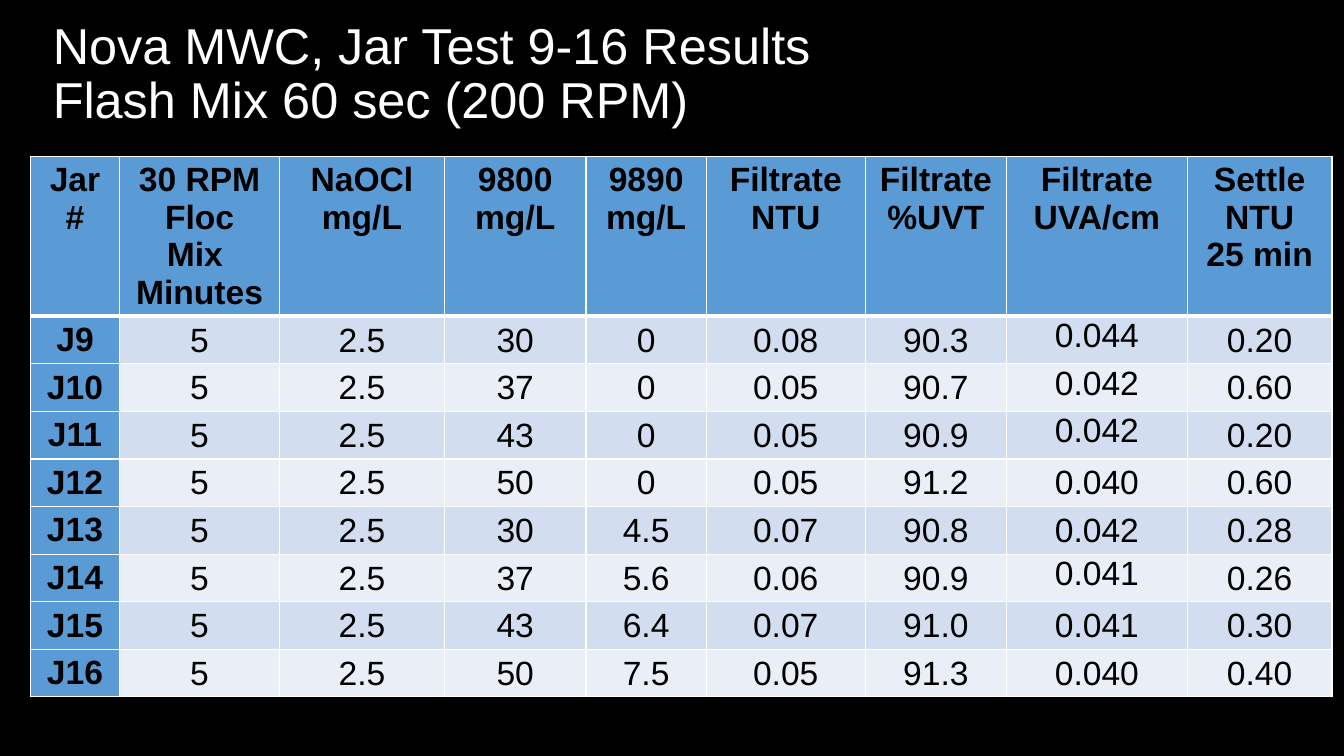
from lxml.etree import SubElement
from pptx import Presentation
from pptx.dml.color import RGBColor
from pptx.enum.text import MSO_ANCHOR, MSO_AUTO_SIZE, PP_ALIGN
from pptx.oxml.ns import qn
from pptx.util import Pt

COLORS = {
    "background": "000000",
    "title": "FFFFFF",
    "text": "000000",
    "header": "5B9BD5",
    "odd": "D2DEEF",
    "even": "EAEFF7",
    "border": "FFFFFF",
}
FONT = "Arial"
TITLE = "Nova MWC, Jar Test 9-16 Results\vFlash Mix 60 sec (200 RPM)"
HEADERS = [
    "Jar\v#", "30 RPM\nFloc\nMix \nMinutes", "NaOCl\nmg/L", "9800\nmg/L",
    "9890\nmg/L", "Filtrate\nNTU", "Filtrate\n%UVT", "Filtrate\nUVA/cm",
    "Settle\nNTU\n25 min",
]
RESULTS = [
    ["J9", "5", "2.5", "30", "0", "0.08", "90.3", "0.044", "0.20"],
    ["J10", "5", "2.5", "37", "0", "0.05", "90.7", "0.042", "0.60"],
    ["J11", "5", "2.5", "43", "0", "0.05", "90.9", "0.042", "0.20"],
    ["J12", "5", "2.5", "50", "0", "0.05", "91.2", "0.040", "0.60"],
    ["J13", "5", "2.5", "30", "4.5", "0.07", "90.8", "0.042", "0.28"],
    ["J14", "5", "2.5", "37", "5.6", "0.06", "90.9", "0.041", "0.26"],
    ["J15", "5", "2.5", "43", "6.4", "0.07", "91.0", "0.041", "0.30"],
    ["J16", "5", "2.5", "50", "7.5", "0.05", "91.3", "0.040", "0.40"],
]
COL_WIDTHS = [64, 114, 118, 101, 86, 113.5, 101, 129, 103.5]
HEADER_HEIGHT, ROW_HEIGHT = 114, 34
UVA_COL = 7
TOP_ALIGNED_UVA = {"J9", "J10", "J11", "J14"}


def rgb(name):
    """Return the named colour."""
    return RGBColor.from_string(COLORS[name])


def format_text(tf, size, color, bold, align):
    """Format every paragraph and run of a text frame."""
    for p in tf.paragraphs:
        p.alignment = align
        for r in p.runs:
            r.font.name = FONT
            r.font.size = Pt(size)
            r.font.bold = bold
            r.font.color.rgb = rgb(color)


def set_borders(cell, top=1, bottom=1):
    """Draw the four borders of a cell, ahead of its fill."""
    tcPr = cell._tc.get_or_add_tcPr()
    widths = {"a:lnL": 1, "a:lnR": 1, "a:lnT": top, "a:lnB": bottom}
    for i, (tag, width) in enumerate(widths.items()):
        ln = SubElement(tcPr, qn(tag), w=str(Pt(width)))
        fill = SubElement(ln, qn("a:solidFill"))
        SubElement(fill, qn("a:srgbClr"), val=COLORS["border"])
        tcPr.insert(i, ln)


def add_title(slide, left, top, width, height):
    """Place the two-line title in its box."""
    sp = slide.shapes.title
    sp.left, sp.top, sp.width, sp.height = Pt(left), Pt(top), Pt(width), Pt(height)
    tf = sp.text_frame
    tf.text = TITLE
    tf.auto_size = MSO_AUTO_SIZE.NONE
    tf.vertical_anchor = MSO_ANCHOR.MIDDLE
    tf.paragraphs[0].line_spacing = 0.9
    format_text(tf, 36, "title", False, PP_ALIGN.LEFT)


def fill_cell(cell, text, row, col, jar):
    """Write and style one cell according to its row and column."""
    is_label = row == 0 or col == 0
    cell.text = text
    format_text(cell.text_frame, 24, "text", is_label, PP_ALIGN.CENTER)
    cell.fill.solid()
    band = "odd" if row % 2 else "even"
    cell.fill.fore_color.rgb = rgb("header" if is_label else band)
    if not is_label:
        cell.margin_left = cell.margin_right = cell.margin_top = Pt(0.72)
        cell.margin_bottom = Pt(0)
        if col != UVA_COL or jar not in TOP_ALIGNED_UVA:
            cell.vertical_anchor = MSO_ANCHOR.MIDDLE
    set_borders(cell, top=3 if row == 1 else 1, bottom=3 if row == 0 else 1)


def add_results_table(slide, left, top):
    """Place the jar test results table with its top left corner given."""
    rows = [HEADERS] + RESULTS
    height = HEADER_HEIGHT + ROW_HEIGHT * len(RESULTS)
    table = slide.shapes.add_table(
        len(rows), len(HEADERS), Pt(left), Pt(top), Pt(sum(COL_WIDTHS)), Pt(height)
    ).table
    table.first_col = True
    for column, width in zip(table.columns, COL_WIDTHS):
        column.width = Pt(width)
    for i, values in enumerate(rows):
        table.rows[i].height = Pt(ROW_HEIGHT if i else HEADER_HEIGHT)
        for j, text in enumerate(values):
            fill_cell(table.cell(i, j), text, i, j, values[0])


def main():
    """Build the slide and save it."""
    prs = Presentation()
    prs.slide_width, prs.slide_height = Pt(960), Pt(540)
    slide = prs.slides.add_slide(prs.slide_layouts[5])
    slide.background.fill.solid()
    slide.background.fill.fore_color.rgb = rgb("background")
    add_title(slide, 30.5, 8, 863, 91.5)
    add_results_table(slide, 21.6, 111.6)
    prs.save("out.pptx")


if __name__ == "__main__":
    main()
